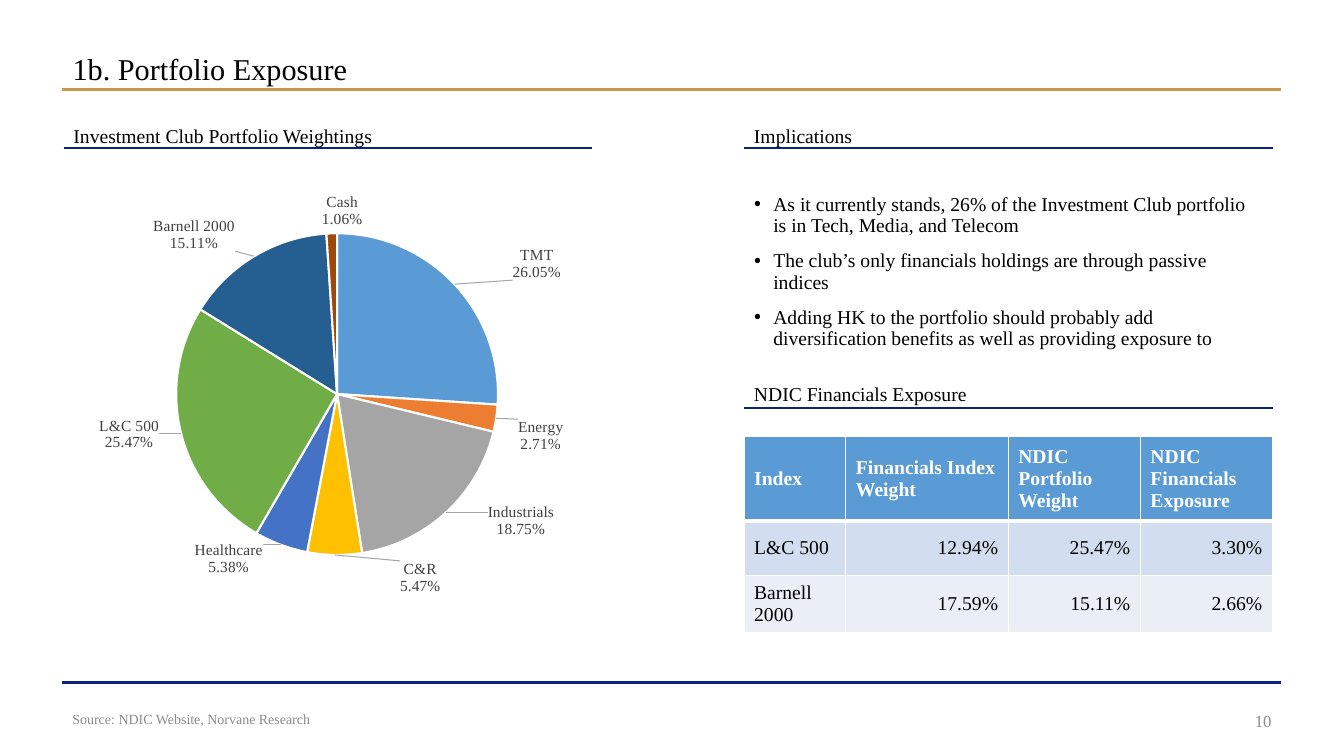
from lxml.etree import SubElement
from pptx import Presentation
from pptx.chart.data import CategoryChartData
from pptx.dml.color import RGBColor
from pptx.enum.chart import XL_CHART_TYPE as ChartType, XL_LABEL_POSITION as LabelPosition
from pptx.enum.shapes import MSO_CONNECTOR as Connector
from pptx.enum.text import MSO_ANCHOR as Anchor, MSO_AUTO_SIZE as AutoSize, PP_ALIGN as Align
from pptx.oxml import parse_xml
from pptx.oxml.ns import nsdecls, qn
from pptx.util import Inches, Pt

SLIDE_WIDTH, SLIDE_HEIGHT = Inches(13.33), Inches(7.5)
FONT = "Times New Roman"
BLACK = RGBColor(0x00, 0x00, 0x00)
WHITE = RGBColor(0xFF, 0xFF, 0xFF)
GOLD = RGBColor(0xC9, 0x97, 0x4D)
NAVY = RGBColor(0x0C, 0x23, 0x7D)
GRAY = RGBColor(0x8C, 0x8C, 0x8C)
LABEL_GRAY = RGBColor(0x40, 0x40, 0x40)
LEADER_GRAY = RGBColor(0xA6, 0xA6, 0xA6)
SKY = RGBColor(0x5B, 0x9B, 0xD5)
BANDS = [RGBColor(0xD2, 0xDE, 0xEF), RGBColor(0xEA, 0xEF, 0xF7)]

MARGIN_LEFT, MARGIN_RIGHT = 4.65, 95.35
LEFT_COLUMN, RIGHT_COLUMN, COLUMN_WIDTH = 4.73, 55.36, 39.35

HOLDINGS = [
    ("TMT", 0.2605, SKY, 0.1, 0),
    ("Energy", 0.0271, RGBColor(0xED, 0x7D, 0x31), 0.03, 0),
    ("Industrials", 0.1875, RGBColor(0xA5, 0xA5, 0xA5), 0.07, -0.03),
    ("C&R", 0.0547, RGBColor(0xFF, 0xC0, 0x00), 0.16, 0),
    ("Healthcare", 0.0538, RGBColor(0x44, 0x72, 0xC4), -0.03, -0.02),
    ("L&C 500", 0.2547, RGBColor(0x70, 0xAD, 0x47), -0.03, -0.04),
    ("Barnell 2000", 0.1511, RGBColor(0x25, 0x5E, 0x91), -0.03, 0),
    ("Cash", 0.0106, RGBColor(0x9E, 0x48, 0x0E), 0.02, 0),
]
IMPLICATIONS = [
    "As it currently stands, 26% of the Investment Club portfolio is in Tech, Media, and Telecom",
    "The club’s only financials holdings are through passive indices",
    "Adding HK to the portfolio should probably add diversification benefits "
    "as well as providing exposure to",
]
EXPOSURE = [
    ["Index", "Financials Index Weight", "NDIC Portfolio Weight", "NDIC Financials Exposure"],
    ["L&C 500", "12.94%", "25.47%", "3.30%"],
    ["Barnell 2000", "17.59%", "15.11%", "2.66%"],
]


def across(percent):
    return round(SLIDE_WIDTH * percent / 100)


def down(percent):
    return round(SLIDE_HEIGHT * percent / 100)


def area(left, top, width, height):
    return across(left), down(top), across(width), down(height)


def style_font(font, size, color, bold=False):
    font.name, font.size, font.bold = FONT, Pt(size), bold
    font.color.rgb = color


def style_text(frame, size, color, align=Align.LEFT, spacing=None, bold=False):
    for para in frame.paragraphs:
        para.alignment = align
        if spacing:
            para.line_spacing = spacing
        for span in para.runs:
            style_font(span.font, size, color, bold)


def move_placeholder(box, place, anchor):
    box.left, box.top, box.width, box.height = place
    box.text_frame.vertical_anchor = anchor
    box.text_frame.auto_size = AutoSize.NONE


def add_rule(page, left, right, top, color, weight):
    rule = page.shapes.add_connector(
        Connector.STRAIGHT, across(left), down(top), across(right), down(top))
    rule.line.color.rgb = color
    rule.line.width = Pt(weight)
    SubElement(rule.element.spPr, qn("a:effectLst"))


def add_label(page, text, place, size, color, align=Align.LEFT, anchor=Anchor.MIDDLE, spacing=None):
    box = page.shapes.add_textbox(*place)
    frame = box.text_frame
    frame.word_wrap = True
    frame.vertical_anchor = anchor
    frame.text = text
    style_text(frame, size, color, align, spacing)


def add_heading(page, text, left, top, rule_top):
    add_rule(page, left, left + COLUMN_WIDTH, rule_top, NAVY, 1.5)
    add_label(page, text, area(left, top, 36.46, 3.33), 14, BLACK, anchor=Anchor.TOP, spacing=0.9)


def fill_title(page, text):
    title = page.shapes.title
    move_placeholder(title, area(MARGIN_LEFT, 6.4, 82.52, 5.87), Anchor.MIDDLE)
    title.text_frame.text = text
    style_text(title.text_frame, 21.6, BLACK, spacing=0.9)


def fill_bullets(page, lines):
    body = page.placeholders[1]
    move_placeholder(body, area(RIGHT_COLUMN, 25.07, 39.31, 24.93), Anchor.TOP)
    body.text_frame.text = "\n".join(lines)
    for index, para in enumerate(body.text_frame.paragraphs):
        properties = para._p.get_or_add_pPr()
        properties.set("marL", str(Inches(0.19)))
        properties.set("indent", str(-Inches(0.19)))
        SubElement(properties, qn("a:buFont"), typeface="Arial")
        SubElement(properties, qn("a:buChar"), char="•")
        para.space_before = Pt(10 if index else 0)
    style_text(body.text_frame, 14, BLACK, spacing=0.9)


def manual_layout(**values):
    layout = parse_xml(f"<c:layout {nsdecls('c')}><c:manualLayout/></c:layout>")
    for name, value in values.items():
        SubElement(layout[0], qn(f"c:{name}"), val=str(value))
    return layout


def show_name_and_value(labels):
    labels.find(qn("c:showCatName")).set("val", "1")
    separator = parse_xml(f"<c:separator {nsdecls('c')}>\n</c:separator>")
    labels.find(qn("c:showBubbleSize")).addnext(separator)


def add_weightings_pie(page):
    data = CategoryChartData(number_format="0.00%")
    data.categories = [holding[0] for holding in HOLDINGS]
    data.add_series("Portfolio weight", [holding[1] for holding in HOLDINGS])
    chart = page.shapes.add_chart(
        ChartType.PIE, *area(LEFT_COLUMN, 23.33, 39.91, 57.07), data).chart
    chart.has_legend = chart.has_title = False
    style_font(chart.font, 11, LABEL_GRAY)
    plot = chart.plots[0]
    plot.vary_by_categories = True
    series = plot.series[0]
    labels = series.data_labels
    labels.show_value = True
    labels.number_format = "0.00%"
    labels.number_format_is_linked = False
    labels.position = LabelPosition.OUTSIDE_END
    style_font(labels.font, 11, LABEL_GRAY)
    for index, (name, weight, color, shift_x, shift_y) in enumerate(HOLDINGS):
        point = series.points[index]
        point.format.fill.solid()
        point.format.fill.fore_color.rgb = color
        point.format.line.color.rgb = WHITE
        point.format.line.width = Pt(1.5)
        point.data_label.position = LabelPosition.OUTSIDE_END
        style_font(point.data_label.font, 11, LABEL_GRAY)
        label = series._element.find(qn("c:dLbls")).findall(qn("c:dLbl"))[index]
        label.find(qn("c:idx")).addnext(manual_layout(x=shift_x, y=shift_y))
        show_name_and_value(label)
    group = series._element.find(qn("c:dLbls"))
    show_name_and_value(group)
    group.append(parse_xml(
        f"<c:leaderLines {nsdecls('c', 'a')}><c:spPr><a:ln w='{Pt(0.75)}'><a:solidFill>"
        f"<a:srgbClr val='{LEADER_GRAY}'/></a:solidFill></a:ln></c:spPr></c:leaderLines>"))
    plot_area = chart._chartSpace.chart.plotArea
    for layout in plot_area.findall(qn("c:layout")):
        plot_area.remove(layout)
    plot_area.insert(0, manual_layout(
        layoutTarget="inner", xMode="edge", yMode="edge", x=0.21, y=0.13, w=0.6, h=0.75))


def set_borders(cell, bottom):
    properties = cell._tc.get_or_add_tcPr()
    for index, (side, weight) in enumerate(zip("LRTB", (1, 1, 1, bottom))):
        properties.insert(index, parse_xml(
            f"<a:ln{side} {nsdecls('a')} w='{Pt(weight)}'><a:solidFill>"
            f"<a:srgbClr val='{WHITE}'/></a:solidFill></a:ln{side}>"))


def add_exposure_table(page):
    widths, heights = [7.58, 12.08, 9.83, 9.83], [11.2, 7.2, 7.2]
    table = page.shapes.add_table(
        len(heights), len(widths), *area(RIGHT_COLUMN, 57.73, sum(widths), sum(heights))).table
    for column, width in zip(table.columns, widths):
        column.width = across(width)
    for row_index, (row, height) in enumerate(zip(table.rows, heights)):
        row.height = down(height)
        header = row_index == 0
        for column_index, cell in enumerate(row.cells):
            cell.text_frame.text = EXPOSURE[row_index][column_index]
            cell.vertical_anchor = Anchor.MIDDLE
            cell.fill.solid()
            cell.fill.fore_color.rgb = SKY if header else BANDS[row_index - 1]
            align = Align.LEFT if header or column_index == 0 else Align.RIGHT
            style_text(cell.text_frame, 14, WHITE if header else BLACK, align, bold=header)
            set_borders(cell, 3 if header else 1)


def main():
    deck = Presentation()
    deck.slide_width, deck.slide_height = SLIDE_WIDTH, SLIDE_HEIGHT
    page = deck.slides.add_slide(deck.slide_layouts[1])
    add_rule(page, MARGIN_LEFT, MARGIN_RIGHT, 11.87, GOLD, 2.25)
    add_rule(page, MARGIN_LEFT, MARGIN_RIGHT, 90.27, NAVY, 2.25)
    fill_title(page, "1b. Portfolio Exposure")
    add_label(page, "10", area(89.72, 92.67, 5.63, 5.33), 12, GRAY, Align.RIGHT)
    add_label(page, "Source: NDIC Website, Norvane Research",
              area(MARGIN_LEFT, 91.07, 53.26, 8), 10, GRAY)
    add_heading(page, "Investment Club Portfolio Weightings", LEFT_COLUMN, 16.13, 19.6)
    add_heading(page, "Implications", RIGHT_COLUMN, 16.13, 19.6)
    add_weightings_pie(page)
    fill_bullets(page, IMPLICATIONS)
    add_exposure_table(page)
    add_heading(page, "NDIC Financials Exposure", RIGHT_COLUMN, 50.27, 54)
    deck.save("out.pptx")


if __name__ == "__main__":
    main()
